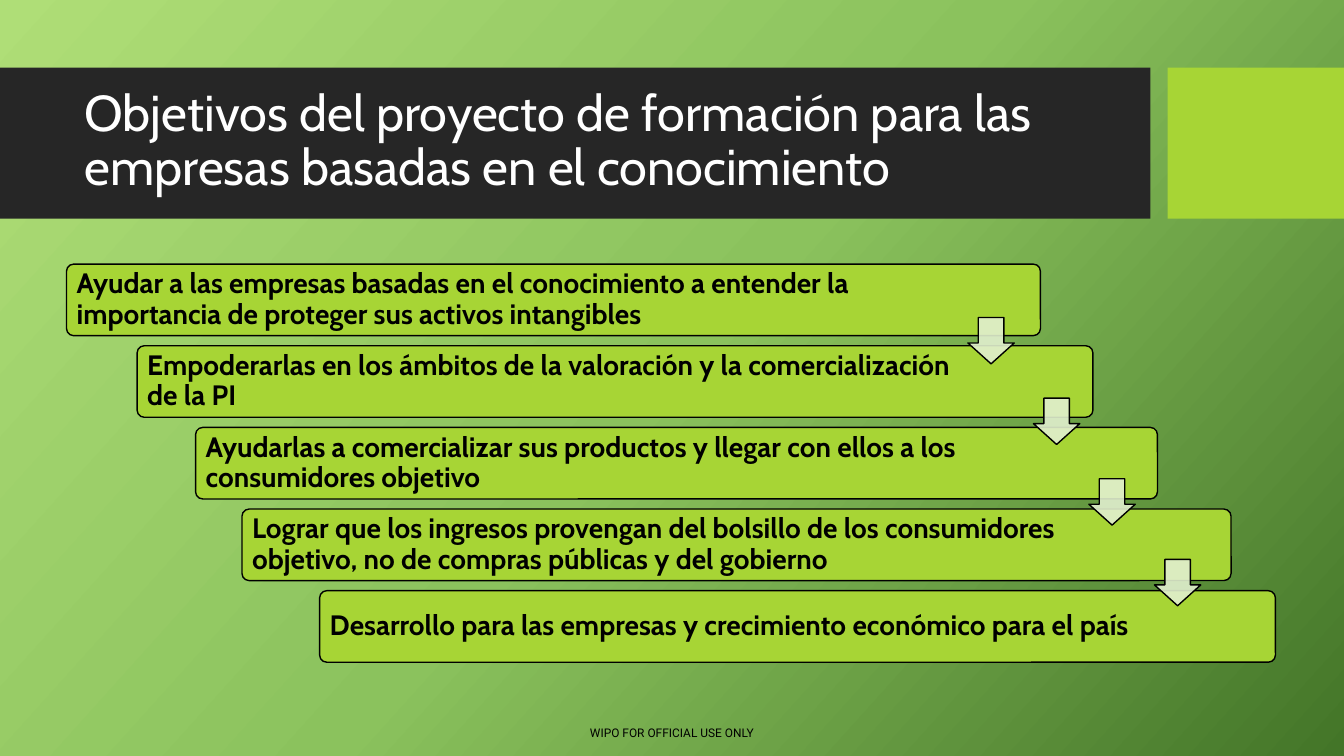
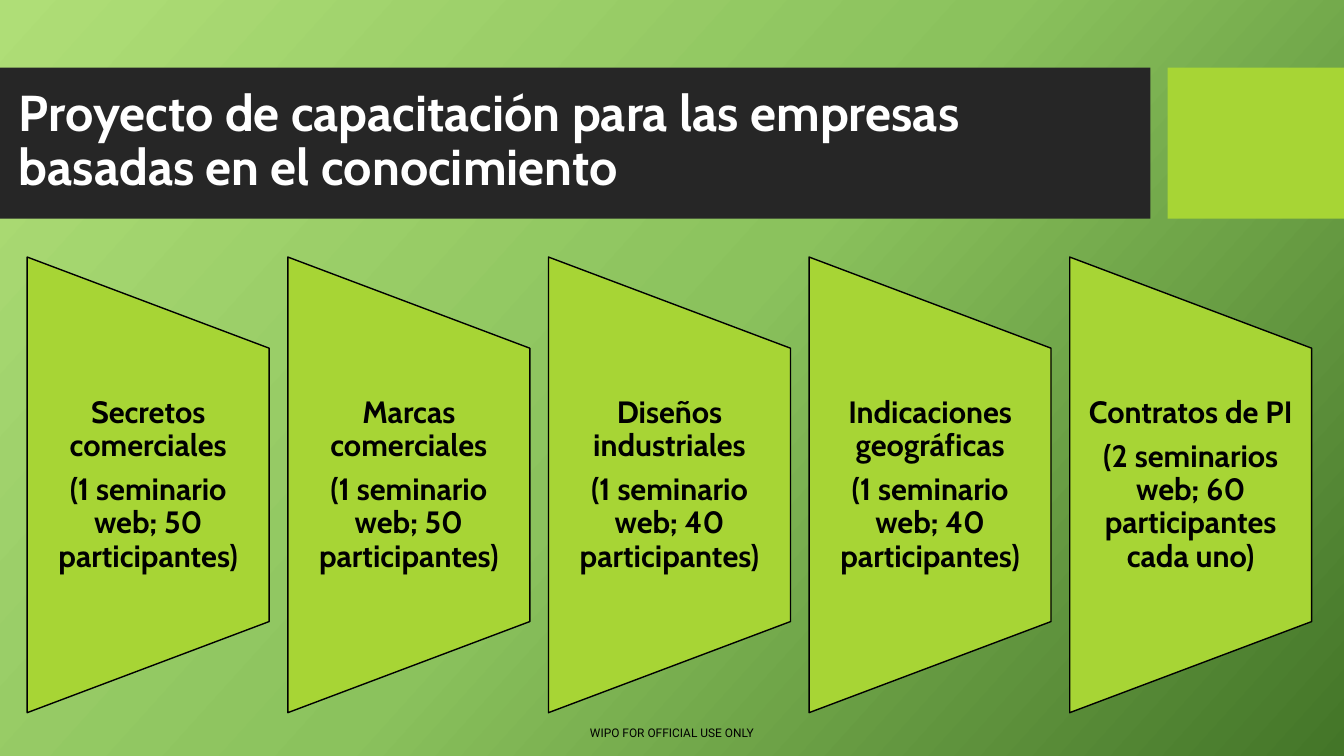
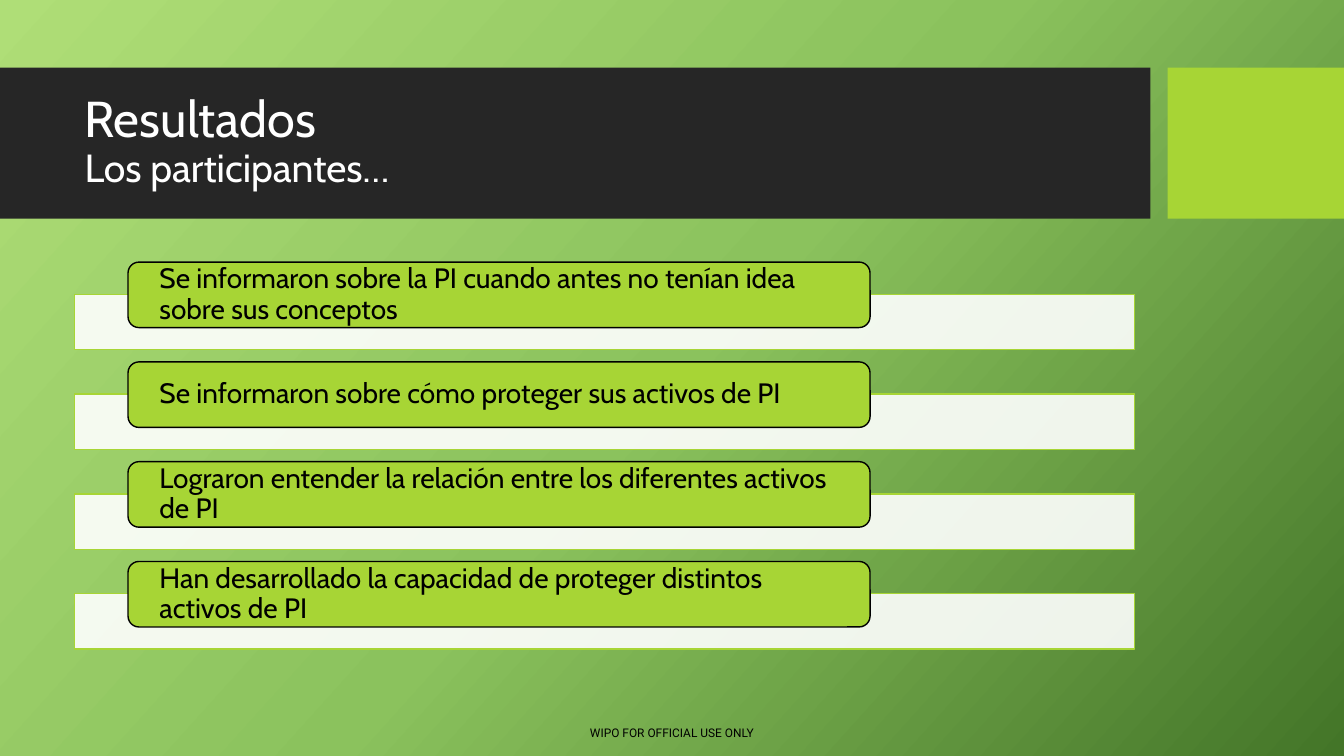
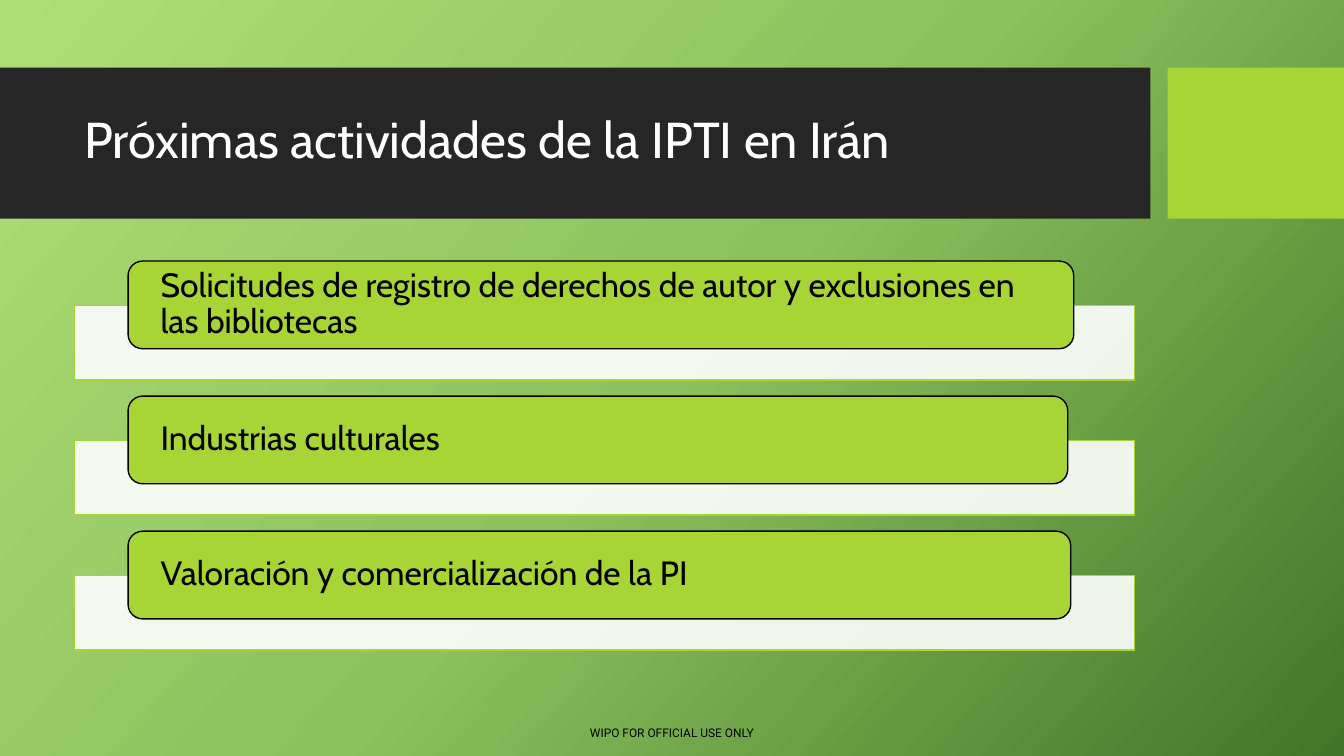
from copy import deepcopy

from lxml import etree
from pptx import Presentation
from pptx.dml.color import RGBColor
from pptx.enum.shapes import MSO_SHAPE
from pptx.enum.text import MSO_ANCHOR, PP_ALIGN
from pptx.oxml.ns import qn
from pptx.util import Inches, Pt

RECTANGLE = MSO_SHAPE.RECTANGLE
ROUNDED = MSO_SHAPE.ROUNDED_RECTANGLE
DOWN_ARROW = MSO_SHAPE.DOWN_ARROW
PANEL = MSO_SHAPE.FLOWCHART_MANUAL_OPERATION
MIDDLE = MSO_ANCHOR.MIDDLE
TOP = MSO_ANCHOR.TOP
LEFT = PP_ALIGN.LEFT
CENTER = PP_ALIGN.CENTER

COLORS = {
    "lime": "A7D535",
    "band": "262626",
    "arrow": "E1EFCE",
    "white": "FFFFFF",
    "black": "000000",
    "gradient_start": "AFDE77",
    "gradient_middle": "8BC25D",
    "gradient_end": "437528",
}


def write_text(shape, paragraphs, size=20, bold=False, color="black", font="Cabin", align=LEFT,
               anchor=MIDDLE, margins=(0.1, 0.05, 0.1, 0.05), line_spacing=0.9, space_after=0):
    frame = shape.text_frame
    frame.word_wrap = True
    frame.vertical_anchor = anchor
    frame.margin_left, frame.margin_top, frame.margin_right, frame.margin_bottom = map(Inches, margins)
    for index, (text, own_size) in enumerate(paragraphs):
        paragraph = frame.add_paragraph() if index else frame.paragraphs[0]
        paragraph.alignment = align
        paragraph.line_spacing = line_spacing
        paragraph.space_after = Pt(space_after)
        run = paragraph.add_run()
        run.text = text
        run.font.name = font
        run.font.size = Pt(own_size or size)
        run.font.bold = bold
        run.font.color.rgb = RGBColor.from_string(COLORS[color])


def add_box(slide, kind, left, top, width, height, fill, line=None, opacity=100):
    shape = slide.shapes.add_shape(kind, Inches(left), Inches(top), Inches(width), Inches(height))
    shape.shadow.inherit = False
    shape.fill.solid()
    shape.fill.fore_color.rgb = RGBColor.from_string(COLORS[fill])
    if opacity < 100:
        color = shape.element.spPr.find(qn("a:solidFill")).find(qn("a:srgbClr"))
        etree.SubElement(color, qn("a:alpha")).set("val", str(opacity * 1000))
    if line:
        shape.line.color.rgb = RGBColor.from_string(COLORS[line])
        shape.line.width = Pt(1)
    else:
        shape.line.fill.background()
    return shape


presentation = Presentation()
presentation.slide_width = Inches(13.33)
presentation.slide_height = Inches(7.5)
blank_layout = presentation.slide_layouts[6]

master = presentation.slide_master
background = master.background.fill
background.gradient()
background.gradient_angle = 318
stop_list = master.element.find(".//" + qn("p:bg")).find(".//" + qn("a:gsLst"))
stop_list.insert(1, deepcopy(stop_list[0]))
gradient = [(0, "gradient_start"), (0.5, "gradient_middle"), (1, "gradient_end")]
for stop, (position, name) in zip(background.gradient_stops, gradient):
    stop.position = position
    stop.color.rgb = RGBColor.from_string(COLORS[name])

titles = [
    ([("Objetivos del proyecto de formación para las empresas basadas en el conocimiento", 36)], 0.74, False),
    ([("Proyecto de capacitación para las empresas basadas en el conocimiento", 36)], 0.09, True),
    ([("Resultados", 36), ("Los participantes…", 28)], 0.74, False),
    ([("Próximas actividades de la IPTI en Irán", 36)], 0.74, False),
]
slides = []
for title, title_left, title_bold in titles:
    slide = presentation.slides.add_slide(blank_layout)
    slides.append(slide)
    footer = slide.shapes.add_textbox(0, Inches(7.15), Inches(13.33), Inches(0.24))
    write_text(footer, [("WIPO FOR OFFICIAL USE ONLY", 8.5)], font="Roboto", align=CENTER,
               anchor=TOP, line_spacing=1)
    add_box(slide, RECTANGLE, 0, 0.67, 11.41, 1.5, "band")
    add_box(slide, RECTANGLE, 11.58, 0.67, 1.75, 1.5, "lime")
    title_box = slide.shapes.add_textbox(Inches(title_left), Inches(0.82),
                                         Inches(11.25 - title_left), Inches(1.18))
    write_text(title_box, title, bold=title_bold, color="white")

objectives_slide, training_slide, results_slide, activities_slide = slides

objectives = [
    (0.66, 9.66, "Ayudar a las empresas basadas en el conocimiento a entender la importancia "
                 "de proteger sus activos intangibles"),
    (1.36, 9.48, "Empoderarlas en los ámbitos de la valoración y la comercialización de la PI"),
    (1.94, 9.54, "Ayudarlas a comercializar sus productos y llegar con ellos a los consumidores objetivo"),
    (2.4, 9.81, "Lograr que los ingresos provengan del bolsillo de los consumidores objetivo, "
                "no de compras públicas y del gobierno"),
    (3.17, 9.48, "Desarrollo para las empresas y crecimiento económico para el país"),
]
for index, (left, width, text) in enumerate(objectives):
    step = add_box(objectives_slide, ROUNDED, left, 2.62 + index * 0.81, width, 0.71, "lime", "black")
    step.adjustments[0] = 0.1
    write_text(step, [(text, 20)], bold=True, margins=(0.08, 0, 1.35, 0))

for index, left in enumerate([9.6, 10.25, 10.8, 11.45]):
    arrow = add_box(objectives_slide, DOWN_ARROW, left, 3.15 + index * 0.8, 0.46, 0.46,
                    "arrow", "black", opacity=90)
    arrow.adjustments[0] = 0.55
    arrow.adjustments[1] = 0.45

trainings = [
    ("Secretos comerciales", "(1 seminario web; 50 participantes)"),
    ("Marcas comerciales", "(1 seminario web; 50 participantes)"),
    ("Diseños industriales", "(1 seminario web; 40 participantes)"),
    ("Indicaciones geográficas", "(1 seminario web; 40 participantes)"),
    ("Contratos de PI", "(2 seminarios web; 60 participantes cada uno)"),
]
panel_width, panel_height, panel_middle = 2.4, 4.52, 4.81
panel_pitch = (10.61 - 0.27) / (len(trainings) - 1)
for index, (topic, seminars) in enumerate(trainings):
    left = 0.27 + index * panel_pitch
    panel = add_box(training_slide, PANEL, left + (panel_width - panel_height) / 2,
                    panel_middle - panel_width / 2, panel_height, panel_width, "lime", "black")
    panel.rotation = 270
    label = training_slide.shapes.add_textbox(Inches(left), Inches(3.46), Inches(panel_width), Inches(2.71))
    write_text(label, [(topic, 22), (seminars, 22)], bold=True, align=CENTER,
               margins=(0.15, 0, 0.15, 0), space_after=7.7)

results = [
    (7.36, "Se informaron sobre la PI cuando antes no tenían idea sobre sus conceptos"),
    (7.36, "Se informaron sobre cómo proteger sus activos de PI"),
    (7.36, "Lograron entender la relación entre los diferentes activos de PI"),
    (7.36, "Han desarrollado la capacidad de proteger distintos activos de PI"),
]
activities = [
    (9.38, "Solicitudes de registro de derechos de autor y exclusiones en las bibliotecas"),
    (9.32, "Industrias culturales"),
    (9.35, "Valoración y comercialización de la PI"),
]
bar_lists = [
    (results_slide, results, 20, 2.6, 0.99, 0.65, 0.32, 0.55),
    (activities_slide, activities, 24, 2.59, 1.34, 0.87, 0.44, 0.74),
]
for slide, items, size, first_top, pitch, label_height, bar_offset, bar_height in bar_lists:
    for index, (width, text) in enumerate(items):
        top = first_top + index * pitch
        add_box(slide, RECTANGLE, 0.74, top + bar_offset, 10.51, bar_height, "white", "lime", opacity=90)
        label = add_box(slide, ROUNDED, 1.27, top, width, label_height, "lime", "black")
        write_text(label, [(text, size)], margins=(0.28, 0, 0.28, 0))

presentation.save("out.pptx")
